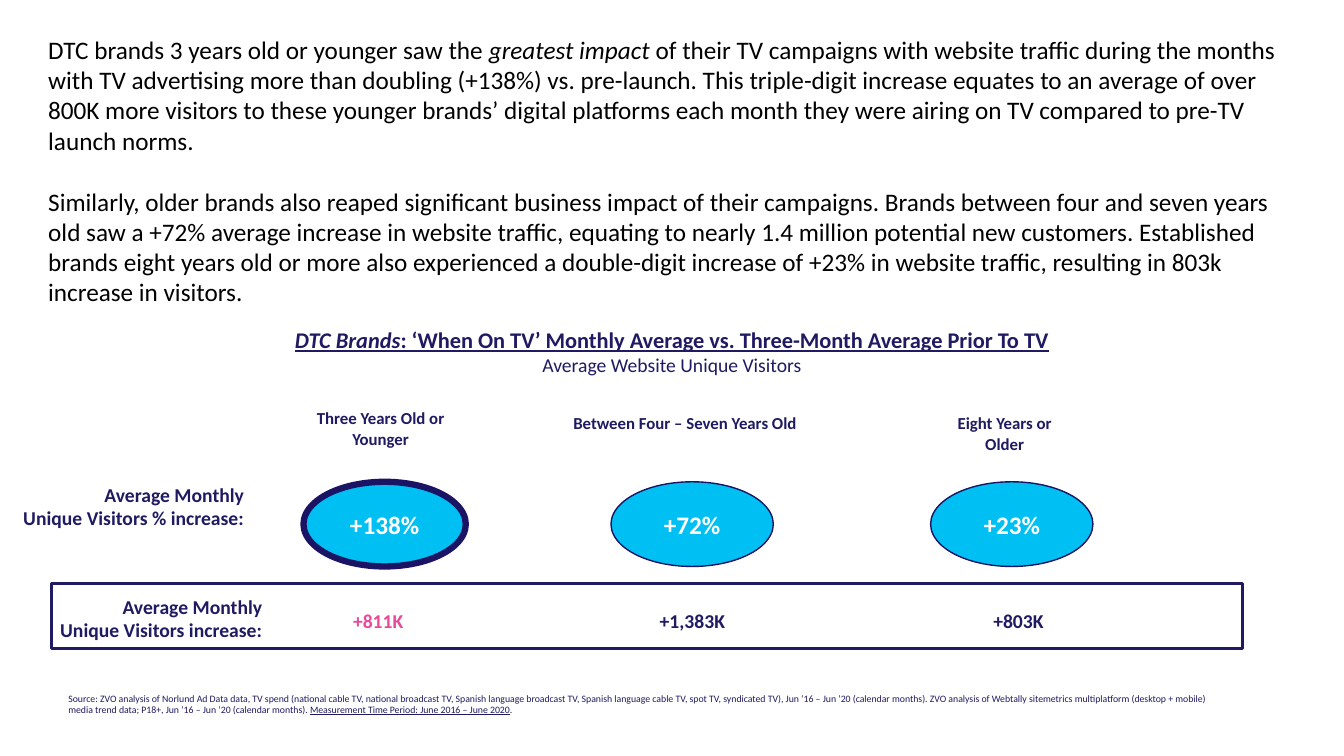
"""Build the slide on website traffic gains of DTC brands by age."""
from pptx import Presentation
from pptx.dml.color import RGBColor
from pptx.enum.shapes import MSO_SHAPE
from pptx.enum.text import MSO_ANCHOR, PP_ALIGN
from pptx.util import Inches, Pt

LEFT, MID, RIGHT = PP_ALIGN.LEFT, PP_ALIGN.CENTER, PP_ALIGN.RIGHT
RECT, OVAL = MSO_SHAPE.RECTANGLE, MSO_SHAPE.OVAL
MIDDLE = MSO_ANCHOR.MIDDLE
FONT = "Calibri"
NAVY, EDGE, CYAN, PINK = "1F1A62", "1B1464", "00C0F3", "E84A99"
WHITE, BLACK = "FFFFFF", "000000"

BODY = [
    [("DTC brands 3 years old or younger saw the ", ""),
     ("greatest impact ", "i"),
     ("of their TV campaigns with website traffic during the months with TV "
      "advertising more than doubling (+138%) vs. pre-launch. This triple-digit "
      "increase equates to an average of over 800K more visitors to these younger "
      "brands’ digital platforms each month they were airing on TV compared to "
      "pre-TV launch norms.", "")],
    [("Similarly, older brands also reaped significant business impact of their "
      "campaigns. Brands between four and seven years old saw a +72% average "
      "increase in website traffic, equating to nearly 1.4 million potential new "
      "customers. Established brands eight years old or more also experienced a "
      "double-digit increase of +23% in website traffic, resulting in 803k "
      "increase in visitors.", "")],
]
TITLE = [
    [("DTC Brands", "biu"),
     (": ‘When On TV’ Monthly Average vs. Three-Month Average Prior To TV", "bu")],
    [("Average Website Unique Visitors", "")],
]
SOURCE = [
    [("Source: ZVO analysis of Norlund Ad Data data, TV spend (national cable TV, "
      "national broadcast TV, Spanish language broadcast TV, Spanish language cable "
      "TV, spot TV, syndicated TV), Jun ‘16 – Jun ’20 (calendar months). ZVO "
      "analysis of Webtally sitemetrics multiplatform (desktop + mobile) media trend "
      "data; P18+, Jun ’16 – Jun ‘20 (calendar months). ", ""),
     ("Measurement Time Period: June 2016 – June 2020", "u"), (".", "")],
]
LABELS = [
    (-0.99, 4.74, "Unique Visitors % increase:"),
    (-0.81, 5.85, "Unique Visitors increase:"),
]
GROUPS = [
    {"name": "Three Years Old or Younger", "head": (2.85, 4, 1.85, 0.5),
     "rate": "+138%", "oval": 3.01, "edge": 4.5,
     "gain": "+811K", "spot": (3.14, 0.96), "hue": PINK},
    {"name": "Between Four – Seven Years Old", "head": (5.41, 4.05, 2.77, 0.3),
     "rate": "+72%", "oval": 6.06, "edge": 1,
     "gain": "+1,383K", "spot": (6.24, 1.05), "hue": NAVY},
    {"name": "Eight Years or Older", "head": (9.23, 4.05, 1.47, 0.5),
     "rate": "+23%", "oval": 9.23, "edge": 1,
     "gain": "+803K", "spot": (9.49, 0.96), "hue": NAVY},
]


def paint(hue):
    return RGBColor.from_string(hue)


def write(shape, paras, sizes, hue, align=LEFT, gap=0):
    frame = shape.text_frame
    frame.word_wrap = True
    for n, (parts, size) in enumerate(zip(paras, sizes)):
        para = frame.add_paragraph() if n else frame.paragraphs[0]
        para.alignment = align
        if n and gap:
            para.space_before = Pt(gap)
        for text, style in parts:
            run = para.add_run()
            run.text = text
            font = run.font
            font.name, font.size = FONT, Pt(size)
            font.color.rgb = paint(hue)
            font.bold = "b" in style
            font.italic = "i" in style
            font.underline = "u" in style


def add_text(slide, box, *args, **opts):
    write(slide.shapes.add_textbox(*map(Inches, box)), *args, **opts)


def add_form(slide, kind, box, fill, line, width):
    form = slide.shapes.add_shape(kind, *map(Inches, box))
    form.shadow.inherit = False
    form.fill.solid()
    form.fill.fore_color.rgb = paint(fill)
    form.line.color.rgb = paint(line)
    form.line.width = Pt(width)
    return form


def main():
    deck = Presentation()
    deck.slide_width, deck.slide_height = Inches(13.33), Inches(7.5)
    slide = deck.slides.add_slide(deck.slide_layouts[6])
    add_text(slide, (0.38, 0.29, 12.65, 3.13), BODY, (18, 18), BLACK, gap=22)
    add_form(slide, RECT, (0.51, 5.79, 11.81, 0.64), WHITE, NAVY, 2.25)
    add_text(slide, (0.58, 6.82, 11.56, 0.38), SOURCE, (7,), NAVY)
    for left, top, text in LABELS:
        lines = [[("Average Monthly", "b")], [(text, "b")]]
        add_text(slide, (left, top, 3.51, 0.57), lines, (14, 14), NAVY, RIGHT)
    for group in GROUPS:
        oval = add_form(slide, OVAL, (group["oval"], 4.78, 1.61, 0.84),
                        CYAN, EDGE, group["edge"])
        oval.text_frame.vertical_anchor = MIDDLE
        write(oval, [[(group["rate"], "b")]], (18,), WHITE, MID)
        add_text(slide, group["head"], [[(group["name"], "b")]], (12,), NAVY, MID)
        left, width = group["spot"]
        add_text(slide, (left, 5.99, width, 0.34), [[(group["gain"], "b")]],
                 (14,), group["hue"], RIGHT)
    add_text(slide, (0.76, 3.19, 11.81, 0.61), TITLE, (16, 14), NAVY, MID)
    deck.save("out.pptx")


if __name__ == "__main__":
    main()
